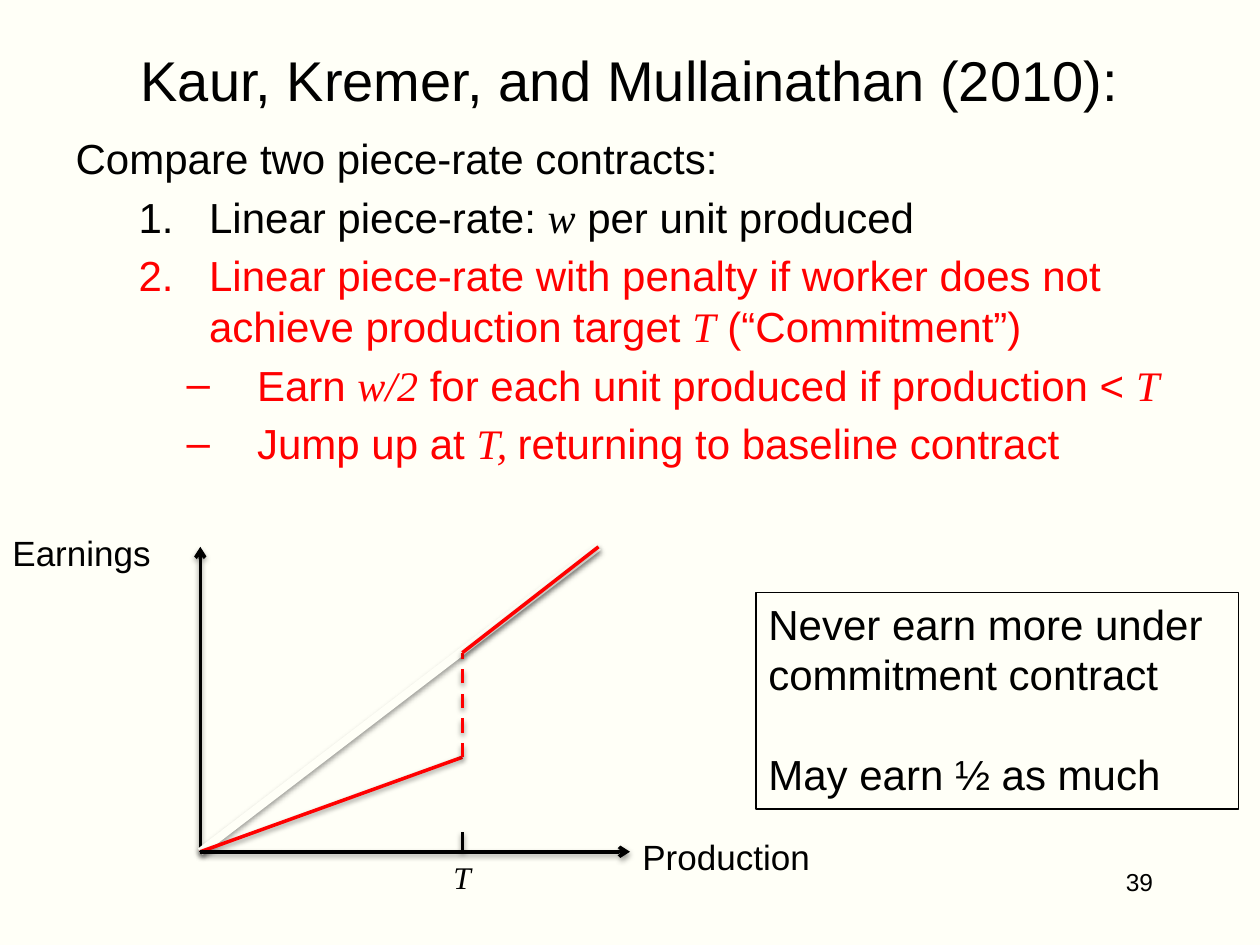
from lxml import etree
from pptx import Presentation
from pptx.dml.color import RGBColor
from pptx.enum import dml, shapes, text
from pptx.oxml import parse_xml
from pptx.oxml.ns import nsdecls, qn
from pptx.util import Inches, Pt

BLACK, RED, PAPER = "000000", "FF0000", "FFFFF7"
SHADOW = (f'<a:effectLst {nsdecls("a")}><a:outerShdw blurRad="39370" dist="20320" '
          'dir="5400000" rotWithShape="0"><a:srgbClr val="000000">'
          '<a:alpha val="38000"/></a:srgbClr></a:outerShdw></a:effectLst>')


def rgb(value):
    return RGBColor.from_string(value)


def add_runs(p, parts, size, color=BLACK):
    """Add runs to p; a part wrapped in asterisks is a maths symbol."""
    for part in parts:
        r = p.add_run()
        maths = part.startswith("*")
        r.text = part.strip("*")
        look = {"name": "Times New Roman" if maths else "Arial",
                "size": Pt(size), "italic": maths}
        for key, value in look.items():
            setattr(r.font, key, value)
        r.font.color.rgb = rgb(color)


prs = Presentation()
prs.slide_width, prs.slide_height = Inches(10), Inches(7.5)
s = prs.slides.add_slide(prs.slide_layouts[1])
s.background.fill.solid()
s.background.fill.fore_color.rgb = rgb(PAPER)

# Title and list
title, body = s.placeholders
for sp, top, height in [(title, 0, 1.25), (body, 1, 4.95)]:
    sp.left, sp.top = Inches(0.5), Inches(top)
    sp.width, sp.height = Inches(9), Inches(height)
    sp.text_frame.auto_size = text.MSO_AUTO_SIZE.NONE
title.text_frame.vertical_anchor = text.MSO_ANCHOR.MIDDLE
p = title.text_frame.paragraphs[0]
p.alignment = text.PP_ALIGN.CENTER
add_runs(p, ["Kaur, Kremer, and Mullainathan (2010):"], 32)

# Per level: left margin, hanging indent, bullet tag, bullet attributes
levels = [
    (0.38, -0.38, "a:buNone", {}),
    (1.06, -0.56, "a:buAutoNum", {"type": "arabicPeriod"}),
    (1.44, -0.56, "a:buChar", {"char": "–"}),
]
items = [
    (0, BLACK, ["Compare two piece-rate contracts:"]),
    (1, BLACK, ["Linear piece-rate: ", "*w*", " per unit produced"]),
    (1, RED, ["Linear piece-rate with penalty if worker does not achieve "
              "production target ", "*T*", " (“Commitment”)"]),
    (2, RED, ["Earn ", "*w/2*", " for each unit produced if production < ", "*T*"]),
    (2, RED, ["Jump up at ", "*T, *", "returning to baseline contract"]),
]
tf = body.text_frame
for i, (level, color, parts) in enumerate(items):
    p = tf.add_paragraph() if i else tf.paragraphs[0]
    p.level = level
    margin, indent, tag, attrs = levels[level]
    pPr = p._p.get_or_add_pPr()
    pPr.set("marL", str(Inches(margin)))
    pPr.set("indent", str(Inches(indent)))
    etree.SubElement(pPr, qn(tag), attrs)
    add_runs(p, parts, 24, color)

# Earnings graph
origin, top_end = (1.59, 6.76), (4.75, 4.34)
target_x = 3.67
low, high = (target_x, 6.01), (target_x, 5.18)
lines = [
    # start, end, colour, width, dashed, arrow
    (origin, (1.59, 4.34), BLACK, 2, False, True),
    (origin, top_end, PAPER, 4.5, False, False),
    (origin, low, RED, 2, False, False),
    (low, high, RED, 2, True, False),
    (high, top_end, RED, 2, False, False),
    ((target_x, 6.76), (target_x, 6.6), BLACK, 2, False, False),
    (origin, (5, 6.76), BLACK, 2, False, True),
]
for start, end, color, width, dashed, arrow in lines:
    line = s.shapes.add_connector(shapes.MSO_CONNECTOR.STRAIGHT,
                                  *map(Inches, start + end))
    line.line.color.rgb = rgb(color)
    line.line.width = Pt(width)
    if dashed:
        line.line.dash_style = dml.MSO_LINE.DASH
    if arrow:
        etree.SubElement(line.line._get_or_add_ln(), qn("a:tailEnd"), type="arrow")
    line._element.spPr.append(parse_xml(SHADOW))

# Axis labels and page number
labels = [
    ("*T*", 18, 3.5, 6.76, 0.42, 0.4, text.PP_ALIGN.LEFT),
    ("Earnings", 20, 0, 4.17, 1.58, 0.44, text.PP_ALIGN.LEFT),
    ("Production", 20, 5, 6.58, 2.17, 0.44, text.PP_ALIGN.LEFT),
    ("39", 14, 7.17, 6.83, 2.08, 0.5, text.PP_ALIGN.RIGHT),
]
for label, size, left, top, width, height, align in labels:
    sp = s.shapes.add_textbox(*map(Inches, (left, top, width, height)))
    sp.text_frame.word_wrap = True
    p = sp.text_frame.paragraphs[0]
    p.alignment = align
    add_runs(p, [label], size)

# Takeaway box
sp = s.shapes.add_shape(shapes.MSO_SHAPE.RECTANGLE,
                        *map(Inches, (6, 4.7, 3.83, 1.72)))
sp.shadow.inherit = False
sp.fill.background()
sp.line.color.rgb = rgb(BLACK)
sp.line.width = Pt(0.75)
tf = sp.text_frame
tf.word_wrap = True
tf.vertical_anchor = text.MSO_ANCHOR.TOP
takeaways = ["Never earn more under commitment contract", "May earn ½ as much"]
for i, takeaway in enumerate(takeaways):
    p = tf.add_paragraph() if i else tf.paragraphs[0]
    p.alignment = text.PP_ALIGN.LEFT
    p.space_before = Pt(28 * i)
    add_runs(p, [takeaway], 24)

prs.save("out.pptx")
